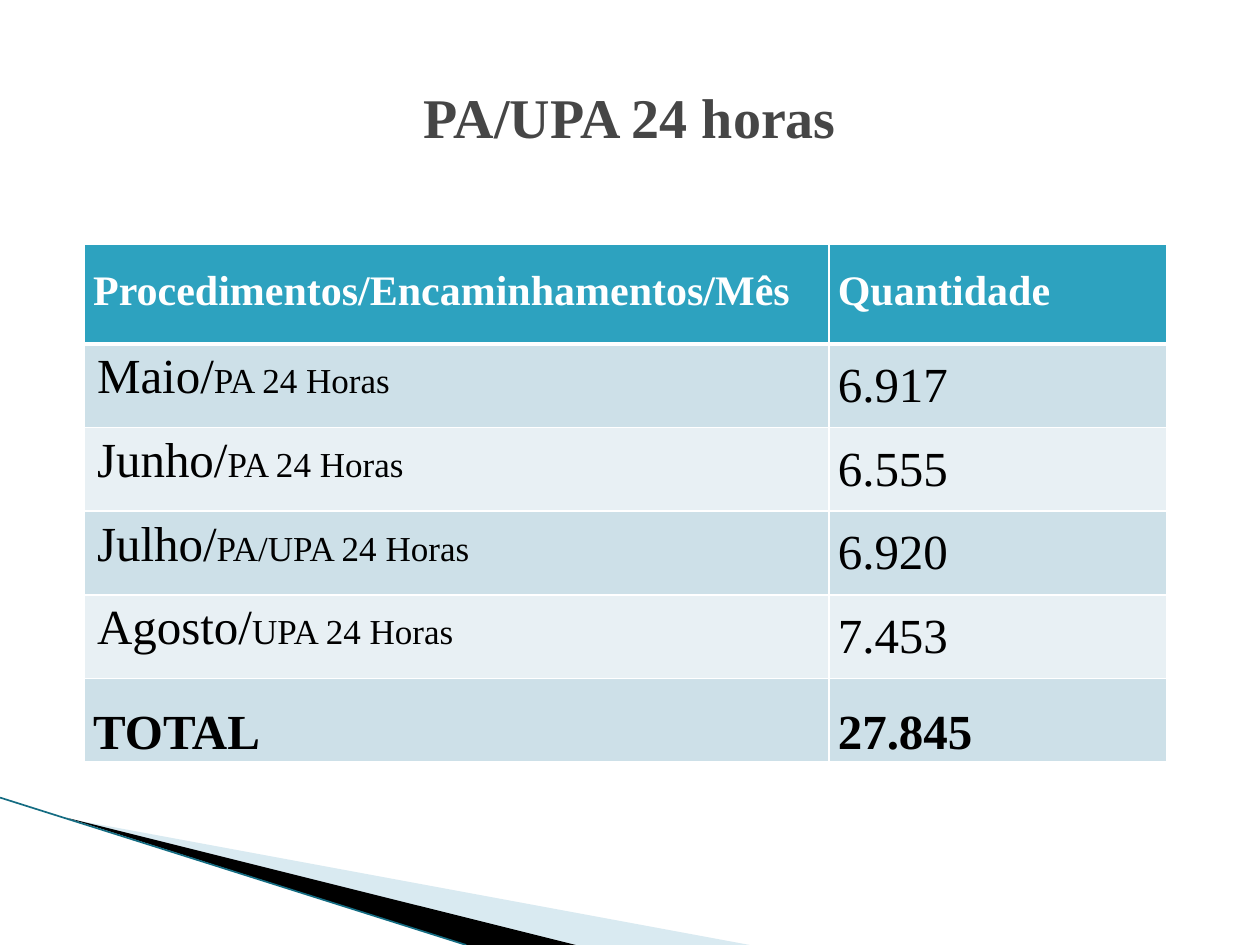
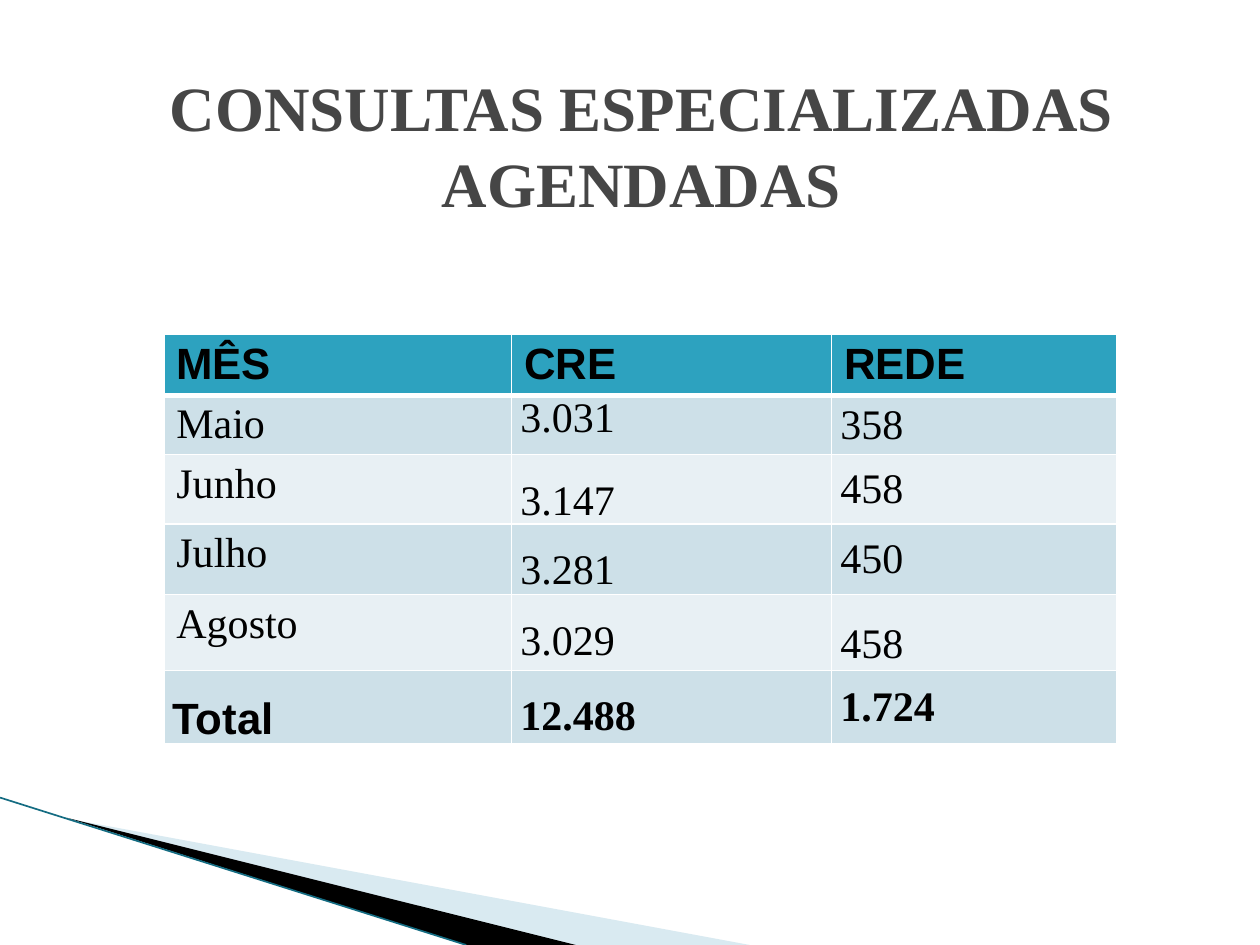
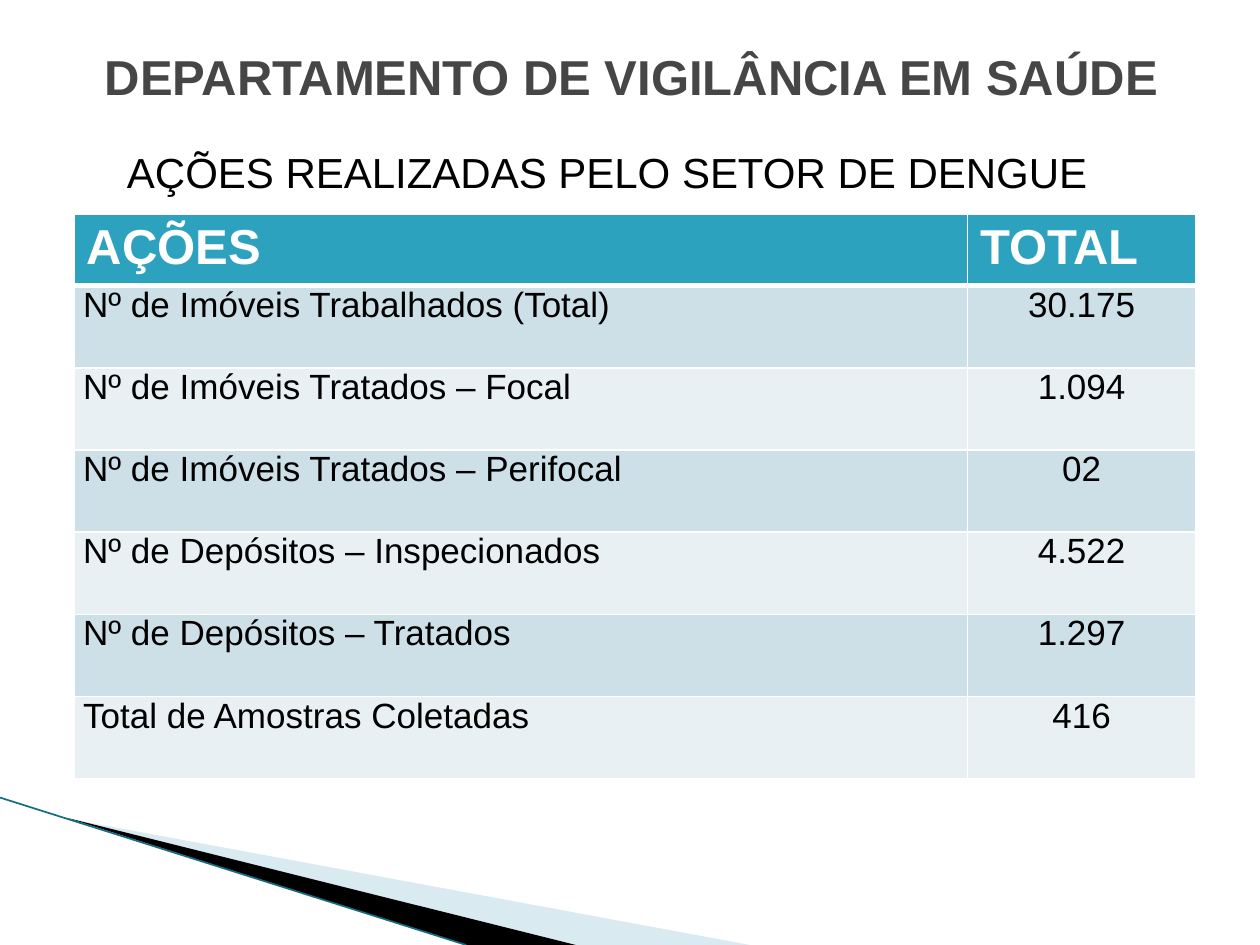
from dataclasses import dataclass

from pptx import Presentation
from pptx.dml.color import RGBColor
from pptx.enum.shapes import MSO_CONNECTOR
from pptx.enum.text import MSO_ANCHOR, MSO_AUTO_SIZE, PP_ALIGN
from pptx.oxml.ns import qn
from pptx.util import Inches, Pt
from lxml.etree import SubElement

WHITE = RGBColor(0xFF, 0xFF, 0xFF)
BLACK = RGBColor(0x00, 0x00, 0x00)
TITLE_GRAY = RGBColor(0x46, 0x46, 0x46)
HEADER_TEAL = RGBColor(0x2D, 0xA2, 0xBF)
BAND_DARK = RGBColor(0xCD, 0xE0, 0xE8)
BAND_LIGHT = RGBColor(0xE8, 0xF0, 0xF4)
SWOOSH_BLUE = RGBColor(0xA0, 0xCB, 0xDC)
SWOOSH_LINE = RGBColor(0x14, 0x6C, 0x82)

SERIF = "Times New Roman"
SANS = "Arial"
GRID_COLUMNS, GRID_ROWS = 100, 75
SLIDE_WIDTH, SLIDE_HEIGHT = Inches(10), Inches(7.5)

TIGHT = dict(tight=True)
MIDDLE = dict(tight=True, anchor=MSO_ANCHOR.MIDDLE)
OPEN = dict(tight=True, spacing=1.5)
OPEN_JUSTIFIED = dict(OPEN, align=PP_ALIGN.JUSTIFY)
CENTERED = dict(tight=True, align=PP_ALIGN.CENTER)


def across(columns):
    return round(SLIDE_WIDTH * columns / GRID_COLUMNS)


def down(rows):
    return round(SLIDE_HEIGHT * rows / GRID_ROWS)


def write(text_frame, text, size=24, font=SERIF, color=BLACK, bold=False,
          align=PP_ALIGN.LEFT, spacing=None):
    paragraph = text_frame.paragraphs[-1]
    paragraph.alignment = align
    paragraph.line_spacing = spacing
    run = paragraph.add_run()
    run.text = text
    run.font.size = Pt(size)
    run.font.name = font
    run.font.bold = bold
    run.font.color.rgb = color


@dataclass
class Deck:
    presentation: object
    font: str = SERIF
    slide: object = None

    def __post_init__(self):
        self.presentation.slide_width = SLIDE_WIDTH
        self.presentation.slide_height = SLIDE_HEIGHT
        self.layout = self.presentation.slide_layouts.get_by_name("Title Only")

    def new_slide(self, font):
        self.font = font
        self.slide = self.presentation.slides.add_slide(self.layout)

    def title(self, text, left, top, height, size):
        shape = self.slide.shapes.title
        shape.left, shape.top = across(left), down(top)
        shape.width, shape.height = across(90), down(height)
        frame = shape.text_frame
        frame.word_wrap = True
        frame.auto_size = MSO_AUTO_SIZE.NONE
        frame.vertical_anchor = MSO_ANCHOR.MIDDLE
        write(frame, text, size=size, font=self.font, color=TITLE_GRAY,
              bold=True, align=PP_ALIGN.CENTER)

    def label(self, text, left, top, width, height, **text_format):
        shape = self.slide.shapes.add_textbox(
            across(left), down(top), across(width), down(height))
        shape.text_frame.word_wrap = True
        write(shape.text_frame, text, font=self.font, **text_format)

    def triangle(self, corners, color, opacity=None):
        points = [(across(column), down(row)) for column, row in corners]
        builder = self.slide.shapes.build_freeform(*points[0])
        builder.add_line_segments(points[1:], close=True)
        shape = builder.convert_to_shape()
        shape.shadow.inherit = False
        shape.fill.solid()
        shape.fill.fore_color.rgb = color
        shape.line.fill.background()
        if opacity:
            fill_color = shape.element.find(".//" + qn("a:srgbClr"))
            SubElement(fill_color, qn("a:alpha"), val=str(opacity * 1000))
        return shape

    def line(self, start, end, color, width):
        connector = self.slide.shapes.add_connector(
            MSO_CONNECTOR.STRAIGHT, across(start[0]), down(start[1]),
            across(end[0]), down(end[1]))
        connector.line.color.rgb = color
        connector.line.width = Pt(width)
        SubElement(connector.element.spPr, qn("a:effectLst"))
        return connector

    def swoosh_on_layout(self):
        swoosh = [
            self.triangle([(5.5, 65), (59.5, 75), (45.6, 75)], SWOOSH_BLUE, 40),
            self.triangle([(5.3, 64.9), (45.7, 75), (37, 75)], BLACK),
            self.line((0, 63.3), (37, 75), SWOOSH_LINE, 0.95),
        ]
        for shape in swoosh:
            self.layout.shapes.element.append(shape.element)

    def cell(self, cell, parts, fill, header, anchor=MSO_ANCHOR.TOP,
             tight=False, **text_format):
        cell.vertical_anchor = anchor
        cell.margin_left = cell.margin_right = Inches(0.07 if tight else 0.1)
        cell.margin_top = cell.margin_bottom = Inches(0 if tight else 0.05)
        for side in ("L", "R", "T", "B"):
            width = Pt(3 if header and side == "B" else 1)
            border = SubElement(cell._tc.get_or_add_tcPr(),
                                qn("a:ln" + side), w=str(width))
            border_fill = SubElement(border, qn("a:solidFill"))
            SubElement(border_fill, qn("a:srgbClr"), val=str(WHITE))
        cell.fill.solid()
        cell.fill.fore_color.rgb = fill
        for text, size in parts:
            write(cell.text_frame, text, **{
                "font": self.font, "size": size, **text_format})

    def table(self, left, top, columns, rows, cells, size):
        table = self.slide.shapes.add_table(
            len(rows), len(columns), across(left), down(top),
            across(sum(columns)), down(sum(rows))).table
        for column, width in zip(table.columns, columns):
            column.width = across(width)
        for row, height in zip(table.rows, rows):
            row.height = down(height)
        for row_index, row_cells in enumerate(cells):
            header = row_index == 0
            band = BAND_DARK if row_index % 2 else BAND_LIGHT
            for column_index, (content, cell_format) in enumerate(row_cells):
                parts = [(content, size)] if isinstance(content, str) else content
                self.cell(table.cell(row_index, column_index), parts,
                          HEADER_TEAL if header else band, header, **cell_format)


def emergency_care(deck):
    deck.new_slide(SERIF)
    deck.swoosh_on_layout()
    deck.title("PA/UPA 24 horas", 5, 3, 12.5, 32)
    header = dict(OPEN_JUSTIFIED, size=24, color=WHITE, bold=True)
    months = [
        ("Maio/", "PA 24 Horas", "6.917"),
        ("Junho/", "PA 24 Horas", "6.555"),
        ("Julho/", "PA/UPA 24 Horas", "6.920"),
        ("Agosto/", "UPA 24 Horas", "7.453"),
    ]
    cells = [
        [("Procedimentos/Encaminhamentos/Mês", header), ("Quantidade", header)],
        *[[([(month, 28), (unit, 20)], {}), (amount, MIDDLE)]
          for month, unit, amount in months],
        [("TOTAL", dict(OPEN_JUSTIFIED, bold=True)),
         ("27.845", dict(OPEN, bold=True))],
    ]
    deck.table(6.7, 19.4, [59.1, 26.8], [7.9] + [6.64] * 5, cells, 28)


def specialist_appointments(deck):
    deck.new_slide(SERIF)
    deck.title("CONSULTAS ESPECIALIZADAS AGENDADAS", 5.9, 5.2, 12.5, 36)
    strong = dict(font=SANS, size=25, bold=True)
    cells = [
        [(heading, strong) for heading in ("MÊS", "CRE", "REDE")],
        [("Maio", {}), ("3.031", TIGHT), ("358", MIDDLE)],
        [("Junho", {}), ("3.147", OPEN), ("458", MIDDLE)],
        [("Julho", {}), ("3.281", OPEN), ("450", MIDDLE)],
        [("Agosto", {}), ("3.029", OPEN), ("458", dict(MIDDLE, spacing=1.5))],
        [("Total", dict(OPEN, **strong)), ("12.488", dict(OPEN, bold=True)),
         ("1.724", dict(MIDDLE, bold=True))],
    ]
    deck.table(13, 26.5, [27.6, 25.4, 22.6],
               [4.8, 4.7, 5.5, 5.6, 6, 5.8], cells, 24)


def health_surveillance(deck):
    deck.new_slide(SANS)
    deck.title("DEPARTAMENTO DE VIGILÂNCIA EM SAÚDE", 5.1, 2.1, 7.9, 28)
    deck.label("AÇÕES REALIZADAS PELO SETOR DE DENGUE", 9.1, 11.1, 85, 5, size=24)
    header = dict(size=28, color=WHITE, bold=True)
    actions = [
        ("Nº de Imóveis Trabalhados (Total)", "30.175"),
        ("Nº de Imóveis Tratados – Focal", "1.094"),
        ("Nº de Imóveis Tratados – Perifocal", "02"),
        ("Nº de Depósitos – Inspecionados", "4.522"),
        ("Nº de Depósitos – Tratados", "1.297"),
        ("Total de Amostras Coletadas", "416"),
    ]
    cells = [
        [("AÇÕES", header), ("TOTAL", header)],
        *[[(action, TIGHT), (total, CENTERED)] for action, total in actions],
    ]
    deck.table(5.9, 17, [70.9, 18.1], [5.5] + [6.52] * 6, cells, 20)


def main():
    presentation = Presentation()
    deck = Deck(presentation)
    emergency_care(deck)
    specialist_appointments(deck)
    health_surveillance(deck)
    presentation.save("out.pptx")


if __name__ == "__main__":
    main()
